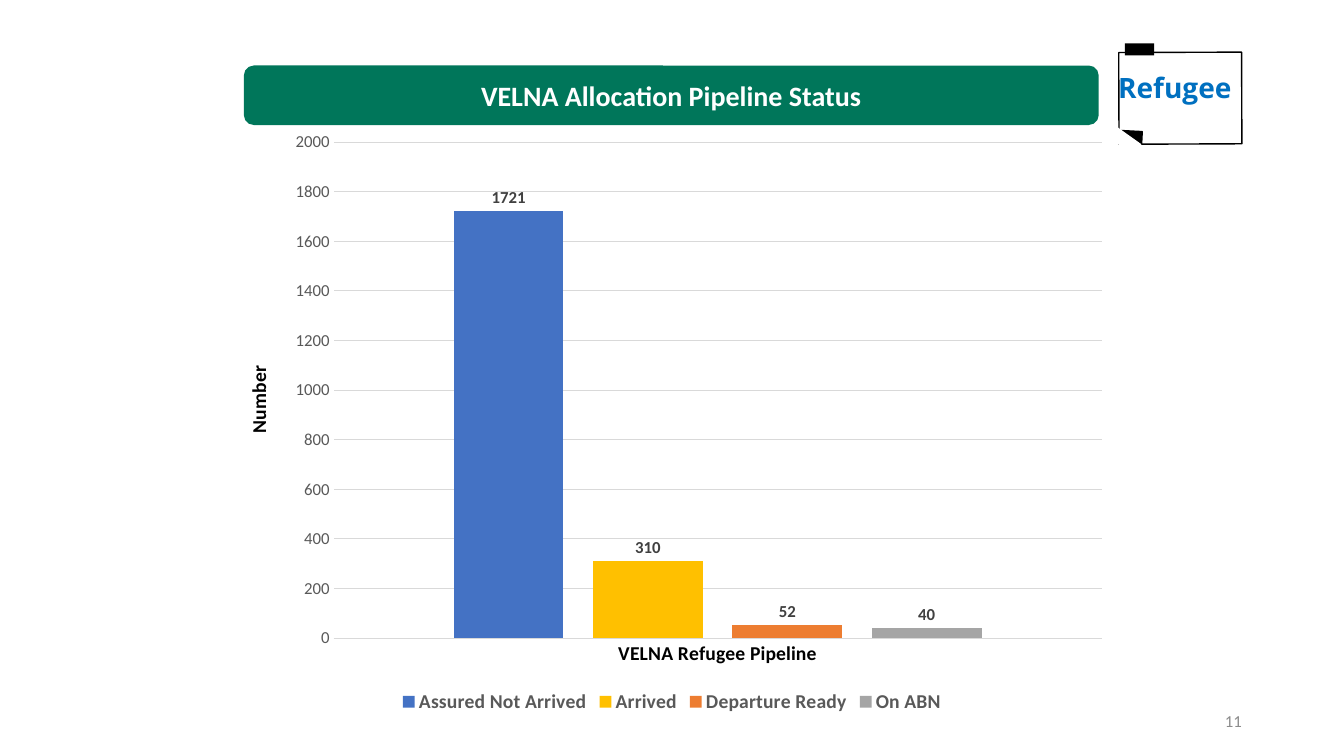
from lxml.etree import SubElement
from pptx import Presentation
from pptx.chart.data import CategoryChartData
from pptx.dml.color import RGBColor
from pptx.enum.chart import XL_CHART_TYPE, XL_LABEL_POSITION, XL_LEGEND_POSITION, XL_TICK_MARK
from pptx.enum.shapes import MSO_SHAPE
from pptx.enum.text import MSO_ANCHOR, PP_ALIGN
from pptx.oxml.ns import qn
from pptx.util import Pt

TITLE = "VELNA Allocation Pipeline Status"
NOTE = "Refugee"
PAGE_NUMBER = "11"
VALUE_TITLE = "Number"
CATEGORY = "VELNA Refugee Pipeline"
PIPELINE = [
    ("Assured Not Arrived", 1721, "4472C4"),
    ("Arrived", 310, "FFC000"),
    ("Departure Ready", 52, "ED7D31"),
    ("On ABN", 40, "A5A5A5"),
]

THEME = {
    "font": "Calibri", "note_font": "Open Sans",
    "banner": "00765A", "white": "FFFFFF", "black": "000000", "note": "0070C0",
    "grid": "D9D9D9", "muted": "595959", "label": "404040", "page": "8C8C8C",
    "heading": 20, "axis": 14, "small": 12, "base": 10,
}

# left, top, width, height in points
SLIDE = (960, 540)
CHART = (160, 85.7, 640, 427)
PLOT = (238.3, 101.5, 548.8, 354.4)
VALUE_TITLE_AT = (172.4, 258.8)
BANNER = (174.2, 46.8, 610.6, 42.5)
NOTE_TEXT = (791.3, 46.8, 95.8, 31.7)
PAGE = (678.2, 500.4, 216, 28.8)
# preset, box, rotation, fill, line
NOTE_PAPER = [
    (MSO_SHAPE.RECTANGLE, (799.2, 37.4, 87.8, 65.5), 359.8, None, "black"),
    (MSO_SHAPE.RIGHT_TRIANGLE, (800.6, 93.6, 15.1, 8.6), 182.9, "black", "black"),
    (MSO_SHAPE.RECTANGLE, (793.4, 96.5, 20.9, 8.6), 35.5, "white", "white"),
    (MSO_SHAPE.RECTANGLE, (803.5, 31, 20.9, 8.6), 0.1, "black", None),
]


def points(box):
    return [Pt(length) for length in box]


def color(name):
    return RGBColor.from_string(THEME.get(name, name))


def assign(target, values):
    for name, value in values.items():
        setattr(target, name, value)


def style_font(font, size, ink, bold=False, face="font"):
    assign(font, {"name": THEME[face], "size": Pt(THEME[size]), "bold": bold})
    font.color.rgb = color(ink)


def style_line(line, ink, width):
    if ink is None:
        line.fill.background()
    else:
        line.color.rgb = color(ink)
        line.width = Pt(width)


def add_block(slide, preset, box, fill, line=None, rotation=0):
    block = slide.shapes.add_shape(preset, *points(box))
    block.rotation = rotation
    block.shadow.inherit = False
    if fill is None:
        block.fill.background()
    else:
        block.fill.solid()
        block.fill.fore_color.rgb = color(fill)
    style_line(block.line, line, 1)
    return block


def write(holder, text, align, anchor, size, ink, bold=True, face="font"):
    frame = holder.text_frame
    assign(frame, {"word_wrap": True, "vertical_anchor": anchor})
    paragraph = frame.paragraphs[0]
    paragraph.alignment = align
    run = paragraph.add_run()
    run.text = text
    style_font(run.font, size, ink, bold, face)


def place_in_chart(element, box, inner=False):
    """Fix a chart part at a slide position, as fractions of the chart."""
    for old in element.findall(qn("c:layout")):
        element.remove(old)
    layout = SubElement(element, qn("c:layout"))
    manual = SubElement(layout, qn("c:manualLayout"))
    left, top, width, height = CHART
    fractions = [(box[0] - left) / width, (box[1] - top) / height]
    fractions += [box[2] / width, box[3] / height] if inner else []
    settings = [("layoutTarget", "inner")] if inner else []
    settings += [("xMode", "edge"), ("yMode", "edge")]
    settings += [(key, f"{part:.4f}") for key, part in zip("xywh", fractions)]
    for key, value in settings:
        SubElement(manual, qn(f"c:{key}")).set("val", value)
    overlay = element.find(qn("c:overlay"))
    if overlay is not None:
        overlay.addprevious(layout)
    else:
        element.insert(0, layout)


def style_value_axis(axis):
    assign(axis, {"minimum_scale": 0, "maximum_scale": 2000, "major_unit": 200,
                  "major_tick_mark": XL_TICK_MARK.NONE, "has_major_gridlines": True})
    style_font(axis.tick_labels.font, "small", "muted")
    style_line(axis.major_gridlines.format.line, "grid", 0.75)
    style_line(axis.format.line, None, 0)
    title = axis.axis_title
    frame = title.text_frame
    frame.text = VALUE_TITLE
    style_font(frame.paragraphs[0].runs[0].font, "axis", "black", True)
    body = frame._txBody.find(qn("a:bodyPr"))
    body.set("rot", "-5400000")
    body.set("vert", "horz")
    place_in_chart(title._element, VALUE_TITLE_AT)


def add_pipeline_chart(slide):
    data = CategoryChartData()
    data.categories = [CATEGORY]
    for stage, count, _ in PIPELINE:
        data.add_series(stage, [count])
    chart = slide.shapes.add_chart(XL_CHART_TYPE.COLUMN_CLUSTERED, *points(CHART), data).chart
    assign(chart, {"has_title": False, "has_legend": True})
    style_font(chart.font, "base", "black")
    assign(chart.legend, {"position": XL_LEGEND_POSITION.BOTTOM, "include_in_layout": False})
    style_font(chart.legend.font, "axis", "muted", True)

    plot = chart.plots[0]
    assign(plot, {"gap_width": 219, "overlap": -27, "vary_by_categories": False})
    for series, (_, _, ink) in zip(plot.series, PIPELINE):
        series.format.fill.solid()
        series.format.fill.fore_color.rgb = color(ink)
        labels = series.data_labels
        assign(labels, {"show_value": True, "position": XL_LABEL_POSITION.OUTSIDE_END})
        style_font(labels.font, "small", "label", True)

    chart.category_axis.major_tick_mark = XL_TICK_MARK.NONE
    style_font(chart.category_axis.tick_labels.font, "axis", "black", True)
    style_line(chart.category_axis.format.line, "grid", 0.75)
    style_value_axis(chart.value_axis)
    place_in_chart(chart._chartSpace.chart.plotArea, PLOT, inner=True)


def main():
    deck = Presentation()
    deck.slide_width, deck.slide_height = points(SLIDE)
    slide = deck.slides.add_slide(deck.slide_layouts[6])
    add_pipeline_chart(slide)
    banner = add_block(slide, MSO_SHAPE.ROUNDED_RECTANGLE, BANNER, "banner")
    write(banner, TITLE, PP_ALIGN.CENTER, MSO_ANCHOR.MIDDLE, "heading", "white")
    for preset, box, rotation, fill, line in NOTE_PAPER:
        add_block(slide, preset, box, fill, line, rotation)
    note = slide.shapes.add_textbox(*points(NOTE_TEXT))
    write(note, NOTE, PP_ALIGN.CENTER, MSO_ANCHOR.TOP, "heading", "note", face="note_font")
    page = slide.shapes.add_textbox(*points(PAGE))
    write(page, PAGE_NUMBER, PP_ALIGN.RIGHT, MSO_ANCHOR.MIDDLE, "small", "page", bold=False)
    deck.save("out.pptx")


if __name__ == "__main__":
    main()
